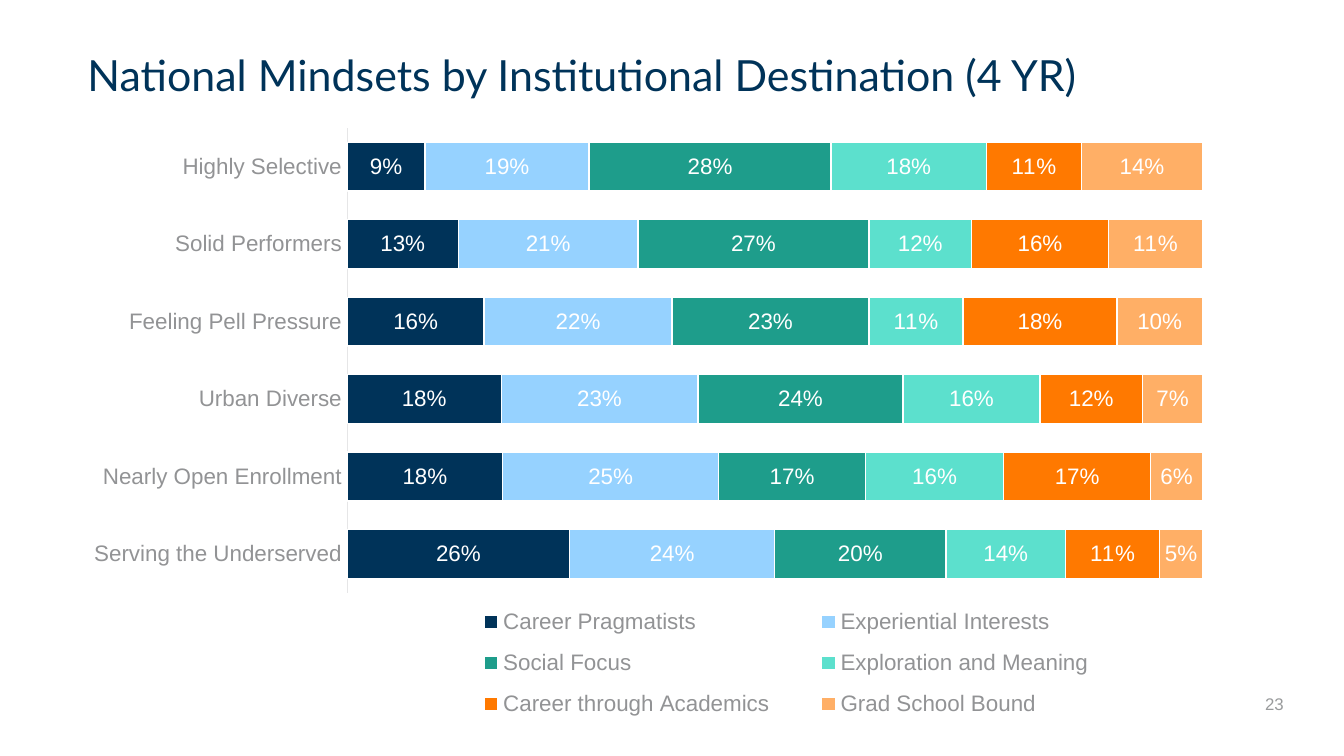
from lxml.etree import SubElement
from pptx import Presentation
from pptx.chart.data import CategoryChartData
from pptx.dml.color import RGBColor
from pptx.enum.chart import XL_CHART_TYPE as ChartType
from pptx.enum.chart import XL_LABEL_POSITION as LabelPosition
from pptx.enum.chart import XL_LEGEND_POSITION as LegendPosition
from pptx.enum.chart import XL_TICK_LABEL_POSITION as TickLabelPosition
from pptx.enum.chart import XL_TICK_MARK as TickMark
from pptx.enum.text import MSO_ANCHOR as Anchor
from pptx.enum.text import MSO_AUTO_SIZE as AutoSize
from pptx.enum.text import PP_ALIGN as Align
from pptx.oxml.ns import qn
from pptx.util import Inches, Pt

TITLE_ONLY = 5
SLIDE_WIDTH = Inches(10)
SLIDE_HEIGHT = SLIDE_WIDTH * 9 // 16
NAVY, GRAY, PALE_GRAY, WHITE = "003359", "929395", "E6E6E7", "FFFFFF"
DESTINATIONS = [
    "Highly Selective", "Solid Performers", "Feeling Pell Pressure",
    "Urban Diverse", "Nearly Open Enrollment", "Serving the Underserved",
]
MINDSETS = [
    ("Career Pragmatists", NAVY, (0.09, 0.13, 0.16, 0.18, 0.18, 0.26)),
    ("Experiential Interests", "96D2FF", (0.19, 0.21, 0.22, 0.23, 0.25, 0.24)),
    ("Social Focus", "1E9D8B", (0.28, 0.27, 0.23, 0.24, 0.17, 0.2)),
    ("Exploration and Meaning", "5CE0CD", (0.18, 0.12, 0.11, 0.16, 0.16, 0.14)),
    ("Career through Academics", "FF7900", (0.11, 0.16, 0.18, 0.12, 0.17, 0.11)),
    ("Grad School Bound", "FFAF66", (0.14, 0.11, 0.1, 0.07, 0.06, 0.05)),
]


def color(hex_string):
    return RGBColor.from_string(hex_string)


def set_values(target, values):
    for name, value in values.items():
        setattr(target, name, value)


def set_font(font, size, hex_string, name="Arial"):
    set_values(font, {"name": name, "size": Pt(size), "bold": False})
    font.color.rgb = color(hex_string)


def set_line(line, hex_string):
    line.color.rgb = color(hex_string)
    line.width = Pt(0.75)


def place_text(shape, box, text, align, size, hex_string, font_name):
    places = map(Inches, box)
    set_values(shape, dict(zip(("left", "top", "width", "height"), places)))
    frame = shape.text_frame
    set_values(frame, {
        "text": text,
        "word_wrap": True,
        "auto_size": AutoSize.NONE,
        "vertical_anchor": Anchor.MIDDLE,
    })
    paragraph = frame.paragraphs[0]
    paragraph.alignment = align
    set_font(paragraph.runs[0].font, size, hex_string, font_name)
    return paragraph


def add_title(slide, box):
    text = "National Mindsets by Institutional Destination (4 YR)"
    paragraph = place_text(slide.shapes.title, box, text, Align.LEFT, 23, NAVY, "Lato")
    paragraph.line_spacing = 0.9


def add_page_number(slide, box):
    shape = slide.shapes.add_textbox(*map(Inches, box))
    place_text(shape, box, "23", Align.RIGHT, 9, "999B9C", "Arial")


def set_layout(parent, index, box, inner=False):
    for old_layout in parent.findall(qn("c:layout")):
        parent.remove(old_layout)
    layout = SubElement(parent, qn("c:layout"))
    parent.insert(index, layout)
    manual = SubElement(layout, qn("c:manualLayout"))
    settings = {"layoutTarget": "inner"} if inner else {}
    settings.update(xMode="edge", yMode="edge")
    settings.update(zip("xywh", map(str, box)))
    for name, value in settings.items():
        SubElement(manual, qn(f"c:{name}")).set("val", value)


def format_axes(chart):
    category_axis = chart.category_axis
    set_values(category_axis, {
        "reverse_order": True,
        "major_tick_mark": TickMark.NONE,
        "minor_tick_mark": TickMark.NONE,
        "tick_label_position": TickLabelPosition.NEXT_TO_AXIS,
        "has_major_gridlines": False,
    })
    set_font(category_axis.tick_labels.font, 12, GRAY)
    set_line(category_axis.format.line, PALE_GRAY)
    set_values(chart.value_axis, {
        "visible": False,
        "has_major_gridlines": False,
        "minimum_scale": 0,
        "maximum_scale": 1,
    })


def format_series(series, hex_string):
    series.format.fill.solid()
    series.format.fill.fore_color.rgb = color(hex_string)
    set_line(series.format.line, WHITE)
    labels = series.data_labels
    set_values(labels, {
        "show_value": True,
        "number_format": "0%",
        "number_format_is_linked": False,
        "position": LabelPosition.CENTER,
    })
    set_font(labels.font, 12, WHITE)


def add_mindset_chart(slide, box):
    chart_data = CategoryChartData(number_format="0%")
    chart_data.categories = DESTINATIONS
    for name, _, values in MINDSETS:
        chart_data.add_series(name, values)
    chart = slide.shapes.add_chart(
        ChartType.BAR_STACKED_100, *map(Inches, box), chart_data
    ).chart
    set_values(chart, {"has_title": False, "has_legend": True})
    set_font(chart.font, 12, "58595B")
    format_axes(chart)

    plot = chart.plots[0]
    set_values(plot, {"gap_width": 59, "overlap": 100, "vary_by_categories": False})
    for series, (_, hex_string, _) in zip(plot.series, MINDSETS):
        format_series(series, hex_string)

    legend = chart.legend
    set_values(legend, {"position": LegendPosition.BOTTOM, "include_in_layout": False})
    set_font(legend.font, 12, GRAY)
    plot_area = chart.element.find(f".//{qn('c:plotArea')}")
    set_layout(plot_area, 0, (0.24, 0.03, 0.74, 0.73), inner=True)
    legend_element = chart.element.find(f".//{qn('c:legend')}")
    set_layout(legend_element, 1, (0.32, 0.76, 0.6, 0.22))


def main():
    presentation = Presentation()
    set_values(presentation, {"slide_width": SLIDE_WIDTH, "slide_height": SLIDE_HEIGHT})
    slide = presentation.slides.add_slide(presentation.slide_layouts[TITLE_ONLY])
    add_page_number(slide, (7.4, 5.09, 2.25, 0.3))
    add_title(slide, (0.55, 0.17, 7.92, 0.82))
    add_mindset_chart(slide, (0.52, 0.81, 8.6, 4.74))
    presentation.save("out.pptx")


if __name__ == "__main__":
    main()
